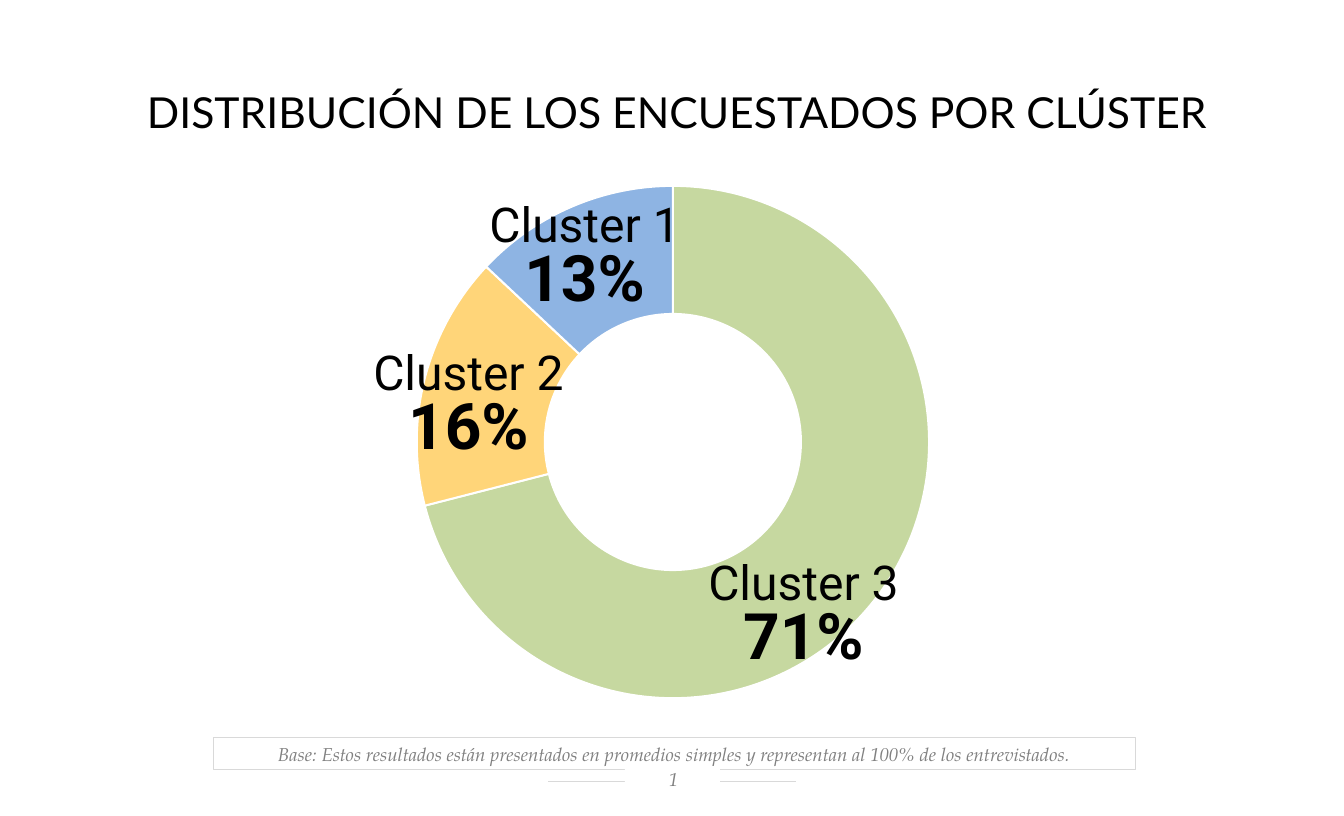
import dataclasses
import typing

import lxml.etree
import pptx
import pptx.chart.data
import pptx.dml.color
import pptx.enum.chart
import pptx.enum.shapes
import pptx.enum.text
import pptx.oxml
import pptx.oxml.ns
import pptx.util

Inches = pptx.util.Inches
Pt = pptx.util.Pt
Anchor = pptx.enum.text.MSO_ANCHOR


def color(value: str) -> pptx.dml.color.RGBColor:
    return pptx.dml.color.RGBColor.from_string(value)


@dataclasses.dataclass(frozen=True)
class Theme:
    ink: str = "000000"
    muted: str = "808080"
    rule: str = "D9D9D9"
    paper: str = "FFFFFF"
    title_font: str = "Lato"
    label_font: str = "Roboto"
    note_font: str = "TeX Gyre Pagella"
    chart_font: str = "Calibri"
    title_size: int = 32
    name_size: int = 36
    share_size: int = 48
    note_size: int = 14
    chart_size: int = 10


THEME = Theme()


class Box(typing.NamedTuple):
    left: float
    top: float
    width: float
    height: float

    def lengths(self) -> list[pptx.util.Length]:
        return [Inches(value) for value in self]


class Style(typing.NamedTuple):
    font: str
    size: int
    color: str
    bold: bool = False
    italic: bool = False


class Cluster(typing.NamedTuple):
    number: int
    share: int
    fill: str
    label_left: float
    label_top: float


CLUSTERS = [
    Cluster(3, 71, "C6D8A0", 6.51, 5.82),
    Cluster(2, 16, "FFD579", 3.02, 3.63),
    Cluster(1, 13, "8EB4E3", 4.23, 2.09),
]
CHART_BOX = Box(2.26, 1.79, 9.49, 5.63)
RING_DIAMETER = 5.34
HOLE_PERCENT = 61
NOTE_STYLE = Style(THEME.note_font, THEME.note_size, THEME.muted, italic=True)


def write_lines(shape, lines: list[tuple[str, Style]], anchor=Anchor.TOP,
                insets: tuple = (0.1, 0.05, 0.1, 0.05), spacing: float = 1.0,
                grow: bool = True) -> None:
    """Fill a shape with centred paragraphs, one run in each."""
    frame = shape.text_frame
    frame.word_wrap = True
    if grow:
        frame.auto_size = pptx.enum.text.MSO_AUTO_SIZE.SHAPE_TO_FIT_TEXT
    frame.vertical_anchor = anchor
    (frame.margin_left, frame.margin_top,
     frame.margin_right, frame.margin_bottom) = map(Inches, insets)
    for index, (text, style) in enumerate(lines):
        paragraph = frame.add_paragraph() if index else frame.paragraphs[0]
        paragraph.alignment = pptx.enum.text.PP_ALIGN.CENTER
        paragraph.line_spacing = spacing
        run = paragraph.add_run()
        run.text = text
        run.font.name = style.font
        run.font.size = Pt(style.size)
        run.font.bold = style.bold
        run.font.italic = style.italic
        run.font.color.rgb = color(style.color)


def add_rectangle(slide, box: Box):
    """Add a rectangle with no shadow, fill or line."""
    shape = slide.shapes.add_shape(
        pptx.enum.shapes.MSO_SHAPE.RECTANGLE, *box.lengths())
    shape.shadow.inherit = False
    shape.fill.background()
    shape.line.fill.background()
    return shape


def add_footer(slide) -> None:
    rule = slide.shapes.add_connector(
        pptx.enum.shapes.MSO_CONNECTOR.STRAIGHT,
        Inches(5.71), Inches(8.14), Inches(8.29), Inches(8.14))
    rule.line.color.rgb = color(THEME.rule)
    rule.line.width = Pt(0.5)
    lxml.etree.SubElement(rule._element.spPr, pptx.oxml.ns.qn("a:effectLst"))

    note = add_rectangle(slide, Box(2.22, 7.68, 9.61, 0.34))
    note.line.color.rgb = color(THEME.rule)
    note.line.width = Pt(0.75)
    text = ("Base: Estos resultados están presentados en promedios simples "
            "y representan al 100% de los entrevistados.")
    write_lines(note, [(text, NOTE_STYLE)], Anchor.BOTTOM)

    page_number = add_rectangle(slide, Box(6.51, 7.98, 0.99, 0.29))
    page_number.fill.solid()
    page_number.fill.fore_color.rgb = color(THEME.paper)
    write_lines(page_number, [("1", NOTE_STYLE)], Anchor.MIDDLE,
                (0.12, 0.02, 0.1, 0.05), grow=False)


def add_title(slide) -> None:
    title = slide.shapes.add_textbox(*Box(0, 0.82, 14, 0.68).lengths())
    style = Style(THEME.title_font, THEME.title_size, THEME.ink)
    write_lines(title, [(" DISTRIBUCIÓN DE LOS ENCUESTADOS POR CLÚSTER", style)],
                insets=(0.14, 0.07, 0.14, 0.07))


def center_ring(chart) -> None:
    """Fix the plot area as a centred square of the ring's diameter."""
    width = RING_DIAMETER / CHART_BOX.width
    height = RING_DIAMETER / CHART_BOX.height
    values = {"x": (1 - width) / 2, "y": (1 - height) / 2, "w": width, "h": height}
    places = "".join(f'<c:{key} val="{value:.3f}"/>' for key, value in values.items())
    layout = pptx.oxml.parse_xml(
        f'<c:layout {pptx.oxml.ns.nsdecls("c")}><c:manualLayout>'
        '<c:layoutTarget val="inner"/><c:xMode val="edge"/><c:yMode val="edge"/>'
        f'{places}</c:manualLayout></c:layout>')
    plot_area = chart._chartSpace.chart.plotArea
    for old_layout in plot_area.findall(pptx.oxml.ns.qn("c:layout")):
        plot_area.remove(old_layout)
    plot_area.insert(0, layout)


def add_ring_chart(slide) -> None:
    data = pptx.chart.data.CategoryChartData()
    data.categories = [str(index) for index in range(1, len(CLUSTERS) + 1)]
    data.add_series("Series 1", [cluster.share for cluster in CLUSTERS])
    chart = slide.shapes.add_chart(
        pptx.enum.chart.XL_CHART_TYPE.DOUGHNUT, *CHART_BOX.lengths(), data).chart
    chart.has_legend = False
    chart.has_title = False
    chart.font.name = THEME.chart_font
    chart.font.size = Pt(THEME.chart_size)
    chart.font.color.rgb = color(THEME.ink)
    plot = chart.plots[0]
    plot.vary_by_categories = True
    plot.has_data_labels = False
    hole = plot._element.find(pptx.oxml.ns.qn("c:holeSize"))
    hole.set("val", str(HOLE_PERCENT))
    for index, cluster in enumerate(CLUSTERS):
        segment = plot.series[0].points[index].format
        segment.fill.solid()
        segment.fill.fore_color.rgb = color(cluster.fill)
        segment.line.color.rgb = color(THEME.paper)
        segment.line.width = Pt(1.5)
    center_ring(chart)


def add_cluster_label(slide, cluster: Cluster) -> None:
    box = Box(cluster.label_left, cluster.label_top, 3.72, 1.25)
    label = slide.shapes.add_textbox(*box.lengths())
    name_style = Style(THEME.label_font, THEME.name_size, THEME.ink)
    share_style = Style(THEME.label_font, THEME.share_size, THEME.ink, bold=True)
    write_lines(label, [(f"Cluster {cluster.number}", name_style),
                        (f"{cluster.share}%", share_style)], spacing=0.81)


def main() -> None:
    presentation = pptx.Presentation()
    presentation.slide_width = Inches(14)
    presentation.slide_height = Inches(8.5)
    slide = presentation.slides.add_slide(presentation.slide_layouts[6])
    add_footer(slide)
    add_title(slide)
    add_ring_chart(slide)
    for cluster in CLUSTERS:
        add_cluster_label(slide, cluster)
    presentation.save("out.pptx")


if __name__ == "__main__":
    main()
